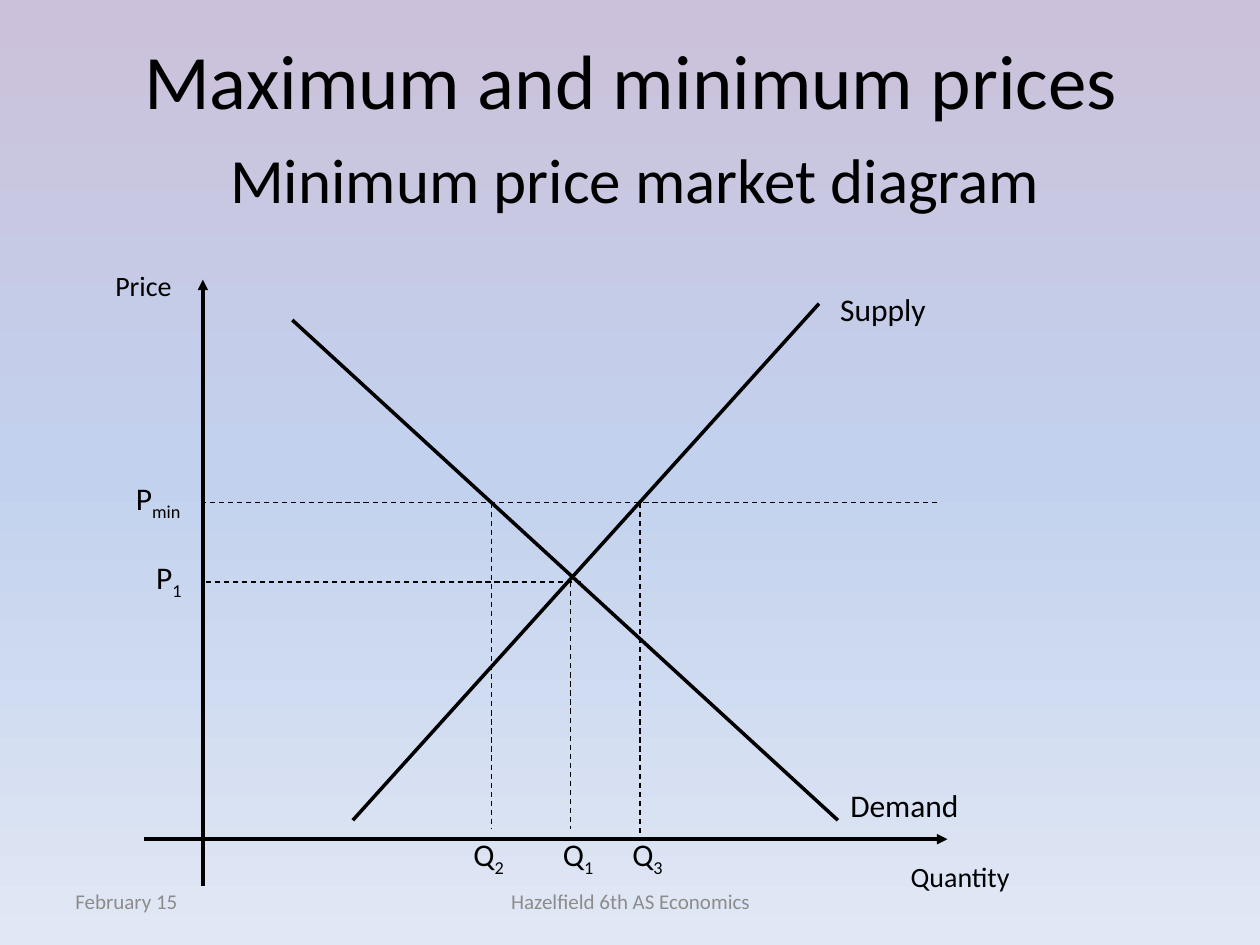
from dataclasses import dataclass

import pptx
import pptx.dml.color
import pptx.enum.dml
import pptx.enum.shapes
import pptx.enum.text
import pptx.oxml
import pptx.oxml.ns
import pptx.util
from copy import deepcopy

Align = pptx.enum.text.PP_ALIGN
Anchor = pptx.enum.text.MSO_ANCHOR
qn = pptx.oxml.ns.qn

COLUMNS, ROWS = 100, 75
CELL = pptx.util.Inches(0.1)


@dataclass(frozen=True)
class Theme:
    font: str = "Calibri"
    ink: str = "000000"
    footer_ink: str = "8C8C8C"
    background: tuple = ((0, "CCC1DA"), (0.5, "C2D1ED"), (1, "E1E8F5"))
    title: float = 44
    subtitle: float = 36
    label: float = 18
    axis_label: float = 16
    footer: float = 12
    thick: float = 2
    thin: float = 0.75


THEME = Theme()


@dataclass(frozen=True)
class Line:
    start: tuple
    end: tuple
    width: float = THEME.thick
    dashed: bool = False
    arrow: bool = False


@dataclass(frozen=True)
class Label:
    """Text in grid cells; the part after an underscore is a subscript."""
    text: str
    area: tuple
    size: float = THEME.label
    align: Align = Align.LEFT
    wrap: bool = False


def grid(cells: float) -> int:
    return round(cells * CELL)


def color(code: str) -> pptx.dml.color.RGBColor:
    return pptx.dml.color.RGBColor.from_string(code)


def write(box, text: str, *, size: float, ink: str = THEME.ink,
          align: Align = Align.LEFT, anchor: Anchor = Anchor.TOP,
          wrap: bool = True, grow: bool = False):
    frame = box.text_frame
    frame.word_wrap = wrap
    frame.vertical_anchor = anchor
    if grow:
        frame.auto_size = pptx.enum.text.MSO_AUTO_SIZE.SHAPE_TO_FIT_TEXT
    para = frame.paragraphs[0]
    para.alignment = align
    base, _, subscript = text.partition("_")
    for part in filter(None, (base, subscript)):
        span = para.add_run()
        span.text = part
        span.font.name = THEME.font
        span.font.size = pptx.util.Pt(size)
        span.font.color.rgb = color(ink)
    if subscript:
        span.font._element.set("baseline", "-25000")
    return para


def place(box, area: tuple) -> None:
    box.left, box.top, box.width, box.height = map(grid, area)


def add_text(page, text: str, area: tuple, **style):
    box = page.shapes.add_textbox(*map(grid, area))
    return write(box, text, **style)


def draw_line(page, line: Line) -> None:
    connector = page.shapes.add_connector(
        pptx.enum.shapes.MSO_CONNECTOR.STRAIGHT,
        *map(grid, line.start + line.end))
    connector.line.color.rgb = color(THEME.ink)
    connector.line.width = pptx.util.Pt(line.width)
    if line.dashed:
        connector.line.dash_style = pptx.enum.dml.MSO_LINE.DASH
    properties = connector._element.spPr
    if line.arrow:
        tip = pptx.oxml.parse_xml(
            f'<a:tailEnd {pptx.oxml.ns.nsdecls("a")} type="triangle"/>')
        properties.find(qn("a:ln")).append(tip)
    properties.append(pptx.oxml.parse_xml(
        f'<a:effectLst {pptx.oxml.ns.nsdecls("a")}/>'))


def paint_background(page) -> None:
    fill = page.background.fill
    fill.gradient()
    fill.gradient_angle = 270
    stops = next(page.element.iter(qn("a:gsLst")))
    stops.insert(1, deepcopy(stops[0]))
    for stop, (position, code) in zip(fill.gradient_stops, THEME.background):
        stop.position = position
        stop.color.rgb = color(code)


def guide(start: tuple, end: tuple) -> Line:
    return Line(start, end, THEME.thin, dashed=True)


PRICE_AXIS, QUANTITY_AXIS = 16.1, 66.6
MINIMUM, EQUILIBRIUM = 39.9, 46.2
DEMANDED, TRADED, SUPPLIED = 39, 45.3, 50.8
GUIDE_FOOT = 65.8

LINES = (
    Line((PRICE_AXIS, 70.3), (PRICE_AXIS, 22.2), arrow=True),
    Line((11.4, QUANTITY_AXIS), (75.2, QUANTITY_AXIS), arrow=True),
    Line((23.2, 25.4), (66.5, 65.1)),
    Line((65, 24.1), (28, 65.1)),
    guide((46.1, EQUILIBRIUM), (PRICE_AXIS, EQUILIBRIUM)),
    guide((TRADED, EQUILIBRIUM), (TRADED, GUIDE_FOOT)),
    guide((74.4, MINIMUM), (PRICE_AXIS, MINIMUM)),
    guide((SUPPLIED, MINIMUM), (SUPPLIED, QUANTITY_AXIS)),
    guide((DEMANDED, MINIMUM), (DEMANDED, GUIDE_FOOT)),
)

LABELS = (
    Label("Price", (2.8, 20.8, 11.8, 3.7), THEME.axis_label, Align.RIGHT, True),
    Label("Quantity", (71.3, 67.7, 15, 3.7), THEME.axis_label, wrap=True),
    Label("Demand", (66.5, 61.9, 10.7, 4)),
    Label("Supply", (65.7, 22.5, 8.9, 4), wrap=True),
    Label("P_min", (9.8, 37.5, 5.9, 4)),
    Label("P_1", (11.4, 43.8, 4.2, 4)),
    Label("Q_2", (36.6, GUIDE_FOOT, 4.6, 4)),
    Label("Q_1", (43.7, GUIDE_FOOT, 4.6, 4)),
    Label("Q_3", (49.2, GUIDE_FOOT, 4.6, 4)),
)


def main() -> None:
    deck = pptx.Presentation()
    deck.slide_width, deck.slide_height = grid(COLUMNS), grid(ROWS)
    page = deck.slides.add_slide(deck.slide_layouts.get_by_name("Title Only"))
    paint_background(page)

    title = page.shapes.title
    place(title, (5.1, 0, 90, 12.5))
    write(title, "Maximum and minimum prices", size=THEME.title,
          align=Align.CENTER, anchor=Anchor.MIDDLE)
    subtitle = add_text(page, "Minimum price market diagram",
                        (5.1, 10.7, 90.6, 58.3), size=THEME.subtitle,
                        align=Align.CENTER)
    subtitle.space_before = pptx.util.Pt(0.2 * THEME.subtitle)

    footer = dict(size=THEME.footer, ink=THEME.footer_ink, anchor=Anchor.MIDDLE)
    add_text(page, "February 15", (5, 69.5, 23.3, 4), **footer)
    add_text(page, "Hazelfield 6th AS Economics", (34.2, 69.5, 31.7, 4),
             align=Align.CENTER, **footer)

    for line in LINES:
        draw_line(page, line)
    for label in LABELS:
        add_text(page, label.text, label.area, size=label.size,
                 align=label.align, wrap=label.wrap, grow=True)
    deck.save("out.pptx")


if __name__ == "__main__":
    main()
